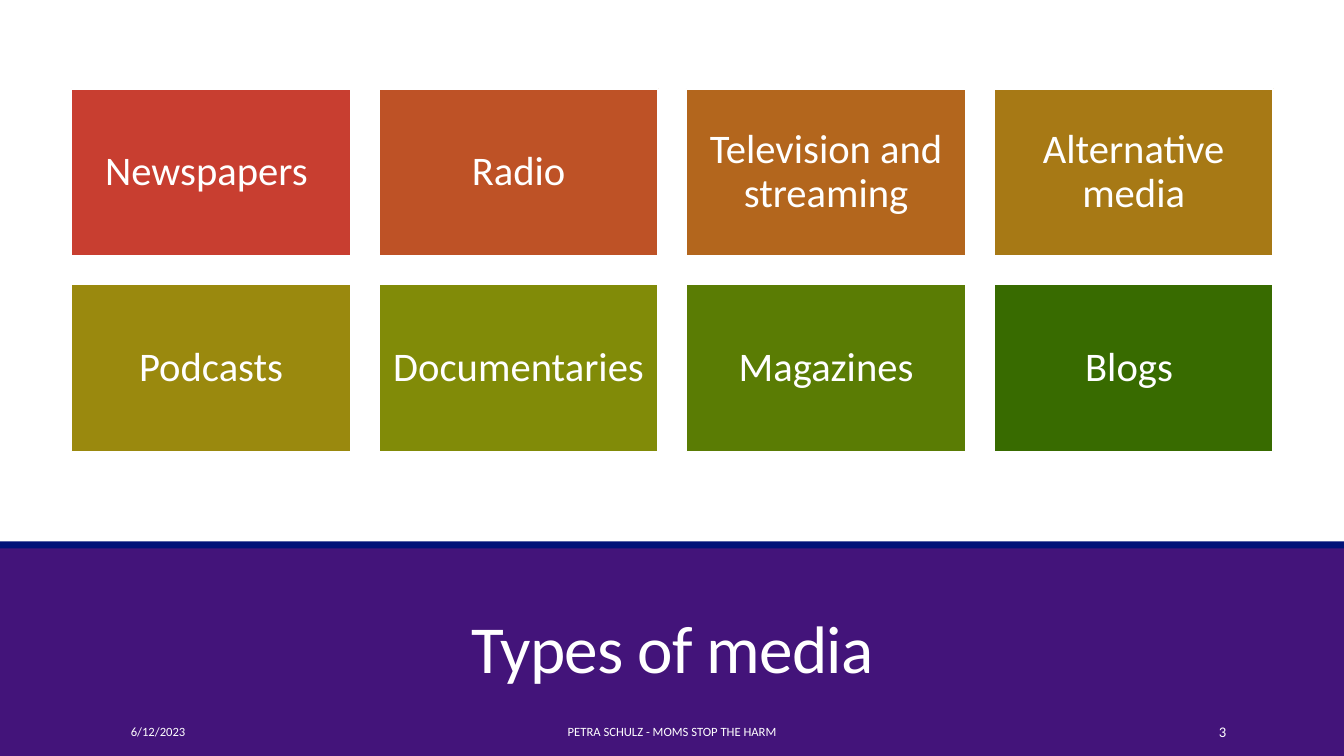
from dataclasses import dataclass

from pptx import Presentation
from pptx.dml.color import RGBColor
from pptx.enum.shapes import MSO_SHAPE
from pptx.enum.text import MSO_ANCHOR, PP_ALIGN
from pptx.util import Inches, Pt

MEDIA = [
    ("Newspapers ", "C83E30"),
    ("Radio", "BE5226"),
    ("Television and streaming", "B3661D"),
    ("Alternative media", "A77915"),
    ("Podcasts", "9A890E"),
    ("Documentaries ", "818B08"),
    ("Magazines", "5A7C04"),
    ("Blogs ", "386B00"),
]
TITLE = "Types of media"
FOOTER = [
    ("6/12/2023", 1.2, 2.7, PP_ALIGN.LEFT, 9),
    ("PETRA SCHULZ - MOMS STOP THE HARM", 4.03, 5.27, PP_ALIGN.CENTER, 9),
    ("3", 10.83, 1.43, PP_ALIGN.RIGHT, 10.5),
]


@dataclass(frozen=True)
class Theme:
    font: str = "Calibri"
    white: str = "FFFFFF"
    band: str = "43147A"
    rule: str = "011278"
    title: float = 48
    tile: float = 29
    edge: float = 1.25


THEME = Theme()
WIDTH, HEIGHT = 13.33, 7.5
COLS = 4
LEFT, TOP = 0.71, 0.88
TILE_W, TILE_H = 2.77, 1.66
STEP_X, STEP_Y = 3.05, 1.94
BAND_TOP = 5.42


def add_rect(slide, box, fill, edge=None):
    rect = slide.shapes.add_shape(MSO_SHAPE.RECTANGLE, *map(Inches, box))
    rect.shadow.inherit = False
    rect.fill.solid()
    rect.fill.fore_color.rgb = RGBColor.from_string(fill)
    if edge:
        rect.line.color.rgb = RGBColor.from_string(edge)
        rect.line.width = Pt(THEME.edge)
    else:
        rect.line.fill.background()
    return rect


def write(shape, text, *, size, align=PP_ALIGN.CENTER, anchor=MSO_ANCHOR.MIDDLE,
          inset=None, leading=None, after=None, track=None):
    """Fill a shape with one paragraph; track is in hundredths of a point."""
    frame = shape.text_frame
    frame.word_wrap = True
    frame.vertical_anchor = anchor
    if inset is not None:
        frame.margin_left = frame.margin_right = Inches(inset)
        frame.margin_top = frame.margin_bottom = Inches(inset)
    para = frame.paragraphs[0]
    para.alignment = align
    if leading:
        para.line_spacing = leading
    if after:
        para.space_after = Pt(after)
    run = para.add_run()
    run.text = text
    run.font.name = THEME.font
    run.font.size = Pt(size)
    run.font.color.rgb = RGBColor.from_string(THEME.white)
    if track:
        run.font._element.set("spc", str(track))


def add_text(slide, box, text, **style):
    write(slide.shapes.add_textbox(*map(Inches, box)), text, **style)


def main():
    deck = Presentation()
    deck.slide_width, deck.slide_height = Inches(WIDTH), Inches(HEIGHT)
    slide = deck.slides.add_slide(deck.slide_layouts[6])

    add_rect(slide, (0, BAND_TOP, WIDTH, HEIGHT - BAND_TOP), THEME.band)
    add_text(slide, (1.17, 5.74, 11, 1.13), TITLE, size=THEME.title,
             anchor=MSO_ANCHOR.BOTTOM, leading=0.85, track=-50)
    add_rect(slide, (0, 5.37, WIDTH, 0.07), THEME.rule)

    for text, left, width, align, size in FOOTER:
        add_text(slide, (left, 7.06, width, 0.4), text,
                 size=size, align=align, after=6)

    for i, (name, fill) in enumerate(MEDIA):
        row, col = divmod(i, COLS)
        box = (LEFT + col * STEP_X, TOP + row * STEP_Y, TILE_W, TILE_H)
        tile = add_rect(slide, box, fill, edge=THEME.white)
        write(tile, name, size=THEME.tile, inset=0.12, leading=0.9, after=10)

    deck.save("out.pptx")


if __name__ == "__main__":
    main()
